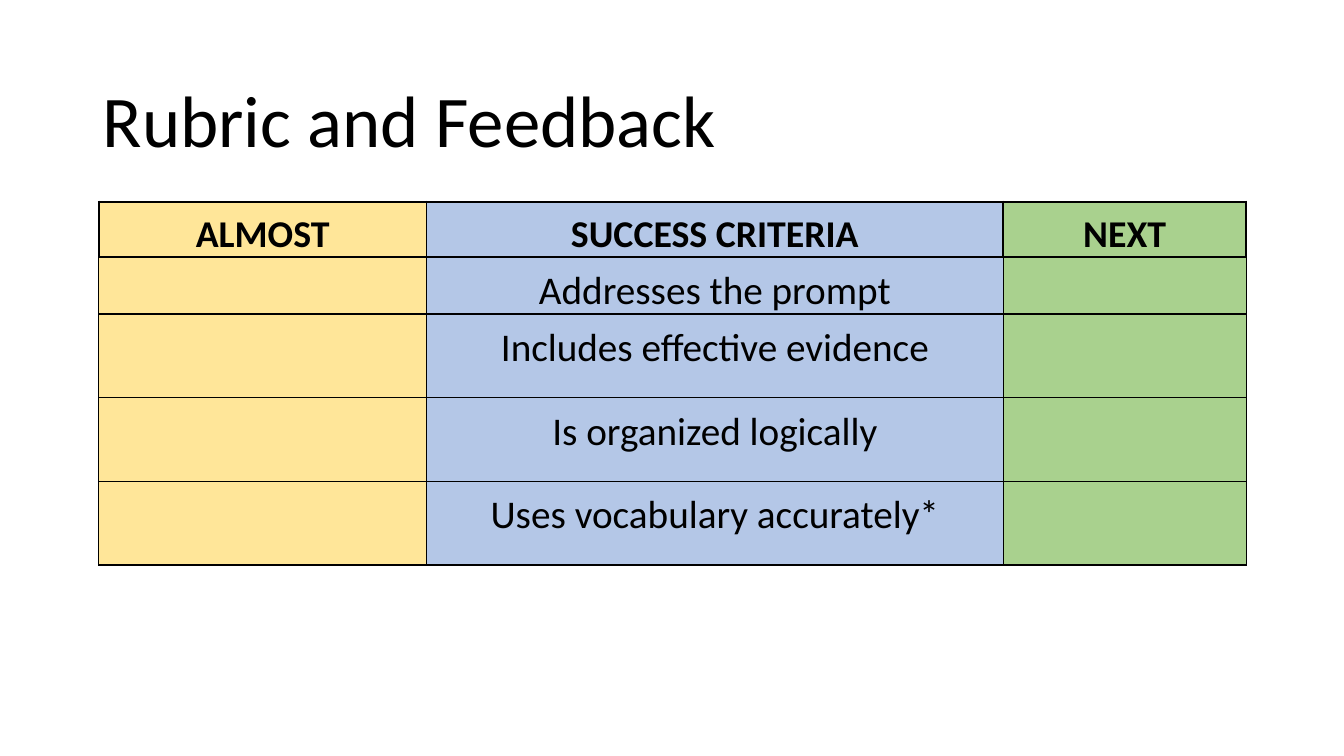
from lxml import etree
from pptx import Presentation
from pptx.dml.color import RGBColor as Rgb
from pptx.enum.text import MSO_ANCHOR as Anchor, PP_ALIGN as Align
from pptx.oxml.ns import qn
from pptx.util import Inches, Pt

HUES = {"ink": "000000", "almost": "FFE699", "core": "B4C7E7", "next": "A9D18E"}
HEADS = [("ALMOST", "almost"), ("SUCCESS CRITERIA", "core"), ("NEXT", "next")]
GOALS = [
    "Addresses the prompt",
    "Includes effective evidence",
    "Is organized logically",
    "Uses vocabulary accurately*",
]
COLS = [3.25, 5.72, 2.41]
ROWS = [0.51, 0.56, 0.83, 0.83, 0.83]
PADS = {"margin_left": 0.19, "margin_top": 0.03, "margin_right": 0.19, "margin_bottom": 0}


def write(frame, text, size, bold, align, space):
    """Put one styled line of text into a frame."""
    para = frame.paragraphs[0]
    para.alignment, para.line_spacing = align, space
    run = para.add_run()
    run.text = text
    for name, value in {"name": "Calibri", "size": Pt(size), "bold": bold}.items():
        setattr(run.font, name, value)
    run.font.color.rgb = Rgb.from_string(HUES["ink"])


def edge(cell, widths):
    """Draw the four borders of a cell, given widths in points by side."""
    props = cell._tc.get_or_add_tcPr()
    for spot, side in enumerate("LRTB"):
        line = etree.Element(qn(f"a:ln{side}"), w=str(Pt(widths[side])))
        fill = etree.SubElement(line, qn("a:solidFill"))
        etree.SubElement(fill, qn("a:srgbClr"), val=HUES["ink"])
        props.insert(spot, line)


def add_title(slide, left, top, width, height):
    """Place the slide title in its box."""
    frame = slide.shapes.add_textbox(*map(Inches, (left, top, width, height))).text_frame
    frame.word_wrap, frame.vertical_anchor = True, Anchor.MIDDLE
    write(frame, "Rubric and Feedback", 52, False, Align.LEFT, 0.9)


def add_rubric(slide, left, top):
    """Place the rubric table with its top left corner at the given point."""
    box = map(Inches, (left, top, sum(COLS), sum(ROWS)))
    table = slide.shapes.add_table(len(ROWS), len(COLS), *box).table
    for col, width in zip(table.columns, COLS):
        col.width = Inches(width)
    for row, height in zip(table.rows, ROWS):
        row.height = Inches(height)
    texts = [[head for head, _ in HEADS]] + [["", goal, ""] for goal in GOALS]
    for r, line in enumerate(texts):
        top_row, last = r == 0, r == len(GOALS)
        base = 1.5 if top_row else 1
        widths = {"L": base, "R": base, "T": 1.5 if r < 2 else 1, "B": 1.5 if last else base}
        for c, text in enumerate(line):
            cell = table.cell(r, c)
            cell.fill.solid()
            cell.fill.fore_color.rgb = Rgb.from_string(HUES[HEADS[c][1]])
            edge(cell, widths)
            if text:
                for name, pad in PADS.items():
                    setattr(cell, name, Inches(pad))
                cell.vertical_anchor = Anchor.MIDDLE if top_row else Anchor.TOP
                write(cell.text_frame, text, 27 if top_row else 28, top_row, Align.CENTER, 1.15)


def main():
    """Build the slide and save it."""
    deck = Presentation()
    deck.slide_width, deck.slide_height = Inches(13.33), Inches(7.5)
    slide = deck.slides.add_slide(deck.slide_layouts[6])
    add_title(slide, 0.92, 0.61, 11.5, 1.24)
    add_rubric(slide, 0.98, 2)
    deck.save("out.pptx")


if __name__ == "__main__":
    main()
